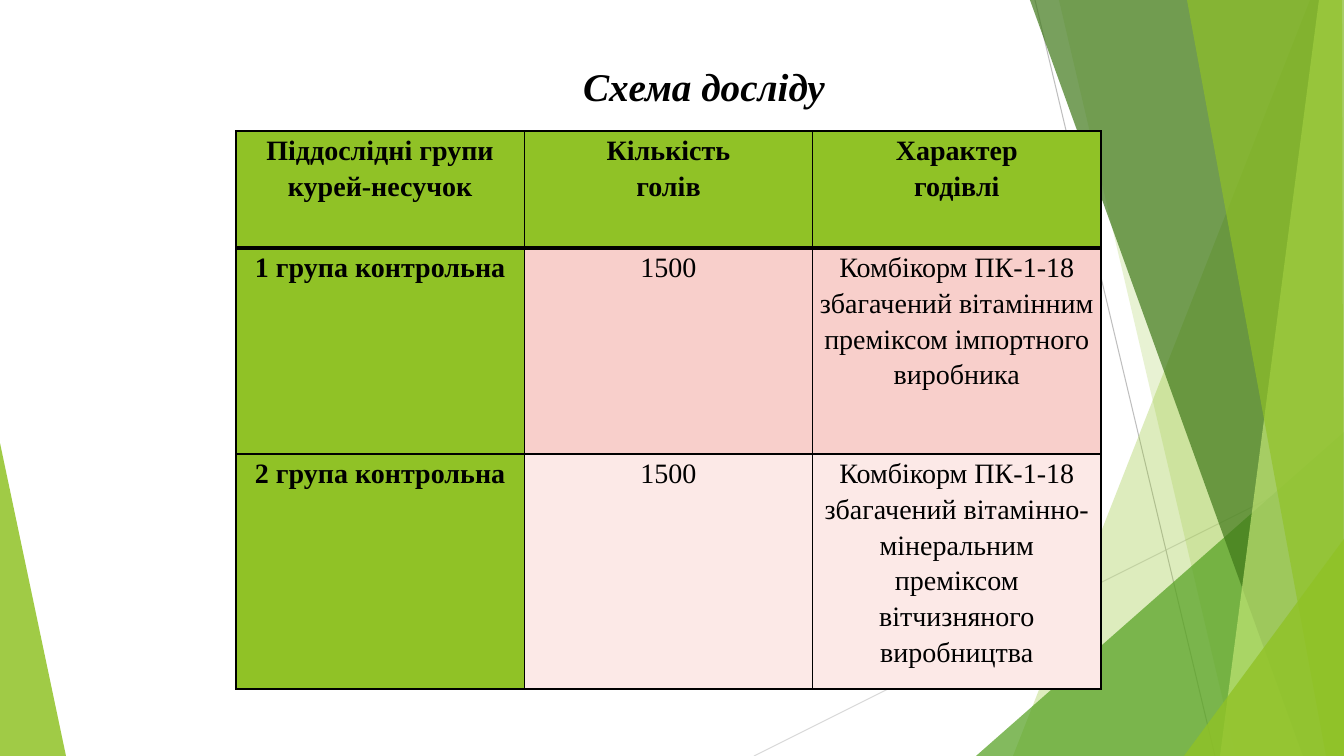
from lxml import etree
from pptx import Presentation
from pptx import util as u
from pptx.dml.color import RGBColor
from pptx.enum import shapes, text
from pptx.oxml.ns import qn

PX = 914400 / 100.8
WIDTH, HEIGHT = 1344, 756
FONT = "Times New Roman"
BLACK, GREEN, PINK, PALE_PINK = "000000", "90C226", "F8CFCB", "FCE9E7"

# Outline points, colour, opacity in percent; back to front
LEFT_FACET = ([(0, 443), (66, 756), (0, 756)], GREEN, 85)
RIGHT_FACETS = [
    ([(1310, 0), (1013, 756), (1344, 756), (1344, 0)], GREEN, 30),
    ([(1059, 0), (1236, 756), (1344, 756), (1344, 0)], GREEN, 20),
    ([(976, 756), (1344, 432), (1344, 756)], "54A021", 72),
    ([(1030, 0), (1303, 756), (1344, 756), (1344, 0)], "3F7819", 70),
    ([(1319, 0), (1220, 756), (1344, 756), (1344, 0)], "C0E474", 70),
    ([(1187, 0), (1326, 756), (1344, 756), (1342, 0)], GREEN, 65),
    ([(1184, 756), (1344, 539), (1344, 756)], GREEN, 80),
]
RAYS = [((754, 756), (1344, 461), "D9D9D9"), ((1035, 0), (1215, 756), "BFBFBF")]

ROW_HEIGHTS = [117, 206, 235]
ROWS = [
    (["Піддослідні групи\nкурей-несучок", "Кількість\nголів", "Характер\nгодівлі"], GREEN),
    (["1 група контрольна", "1500",
      "Комбікорм ПК-1-18 збагачений вітамінним преміксом імпортного виробника"], PINK),
    (["2 група контрольна", "1500",
      "Комбікорм ПК-1-18 збагачений вітамінно-мінеральним преміксом "
      "вітчизняного виробництва"], PALE_PINK),
]


def px(length):
    return u.Emu(round(length * PX))


def color(value):
    return RGBColor.from_string(value)


def set_attributes(target, values):
    for name, value in values.items():
        setattr(target, name, value)


def fill_solid(target, value):
    target.fill.solid()
    target.fill.fore_color.rgb = color(value)


def write_text(frame, content, size, line_spacing=1.0, **style):
    frame.text = content
    for paragraph in frame.paragraphs:
        set_attributes(paragraph, {"alignment": text.PP_ALIGN.CENTER,
                                   "line_spacing": line_spacing})
        for run in paragraph.runs:
            set_attributes(run.font, {"name": FONT, "size": u.Pt(size), **style})
            run.font.color.rgb = color(BLACK)


def add_facet(slide, box, points, fill, opacity):
    left, top = box
    outline = [(left + x, top + y) for x, y in points]
    builder = slide.shapes.build_freeform(*outline[0], scale=PX)
    builder.add_line_segments(outline[1:], close=True)
    shape = builder.convert_to_shape()
    shape.shadow.inherit = False
    fill_solid(shape, fill)
    shape.line.fill.background()
    fill_color = shape._element.spPr.find(qn("a:solidFill"))[0]
    etree.SubElement(fill_color, qn("a:alpha"), val=str(opacity * 1000))


def add_ray(slide, box, start, end, value):
    left, top = box
    ends = [px(left + start[0]), px(top + start[1]), px(left + end[0]), px(top + end[1])]
    connector = slide.shapes.add_connector(shapes.MSO_CONNECTOR.STRAIGHT, *ends)
    connector.line.color.rgb = color(value)
    connector.line.width = u.Pt(0.75)
    etree.SubElement(connector._element.spPr, qn("a:effectLst"))


def add_backdrop(slide, box):
    add_facet(slide, box, *LEFT_FACET)
    for ray in RAYS:
        add_ray(slide, box, *ray)
    for facet in RIGHT_FACETS:
        add_facet(slide, box, *facet)


def set_borders(cell, widths):
    properties = cell._tc.get_or_add_tcPr()
    for position, (side, width) in enumerate(widths.items()):
        line = etree.Element(qn(f"a:ln{side}"), w=str(u.Pt(width)))
        solid = etree.SubElement(line, qn("a:solidFill"))
        etree.SubElement(solid, qn("a:srgbClr"), val=BLACK)
        properties.insert(position, line)


def add_scheme_table(slide, box):
    left, top, width, height = map(px, box)
    count = len(ROWS[0][0])
    table = slide.shapes.add_table(len(ROWS), count, left, top, width, height).table
    for column in table.columns:
        column.width = round(width / count)
    for row_index, (contents, row_fill) in enumerate(ROWS):
        table.rows[row_index].height = px(ROW_HEIGHTS[row_index])
        for column_index, content in enumerate(contents):
            cell = table.cell(row_index, column_index)
            heading = row_index == 0 or column_index == 0
            set_attributes(cell, {"margin_left": px(7), "margin_right": px(7),
                                  "margin_top": 0, "margin_bottom": 0})
            fill_solid(cell, GREEN if heading else row_fill)
            write_text(cell.text_frame, content, 20, 1.15, bold=heading)
            # The rule under the header row is heavier
            set_borders(cell, {"L": 1, "R": 1, "T": 3 if row_index == 1 else 1,
                               "B": 3 if row_index == 0 else 1})


def add_title(slide, box):
    frame = slide.shapes.add_textbox(*map(px, box)).text_frame
    set_attributes(frame, {"word_wrap": True,
                           "vertical_anchor": text.MSO_ANCHOR.BOTTOM})
    write_text(frame, "Схема досліду", 28, bold=True, italic=True)


def main():
    presentation = Presentation()
    set_attributes(presentation, {"slide_width": px(WIDTH), "slide_height": px(HEIGHT)})
    slide = presentation.slides.add_slide(presentation.slide_layouts[6])
    add_backdrop(slide, (0, 0))
    add_scheme_table(slide, (236, 131, 865, sum(ROW_HEIGHTS)))
    add_title(slide, (275, 10, 858, 104))
    presentation.save("out.pptx")


if __name__ == "__main__":
    main()
